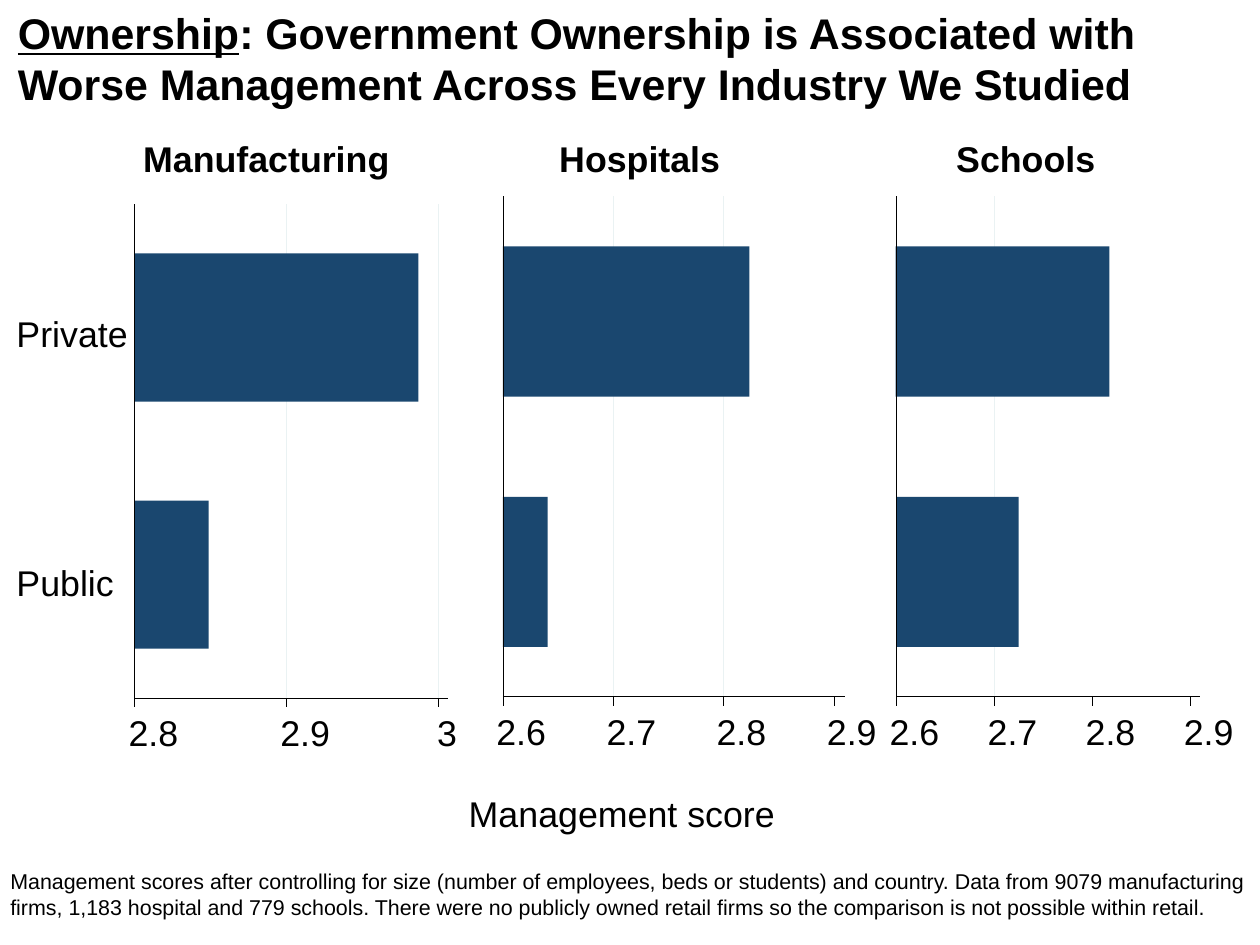
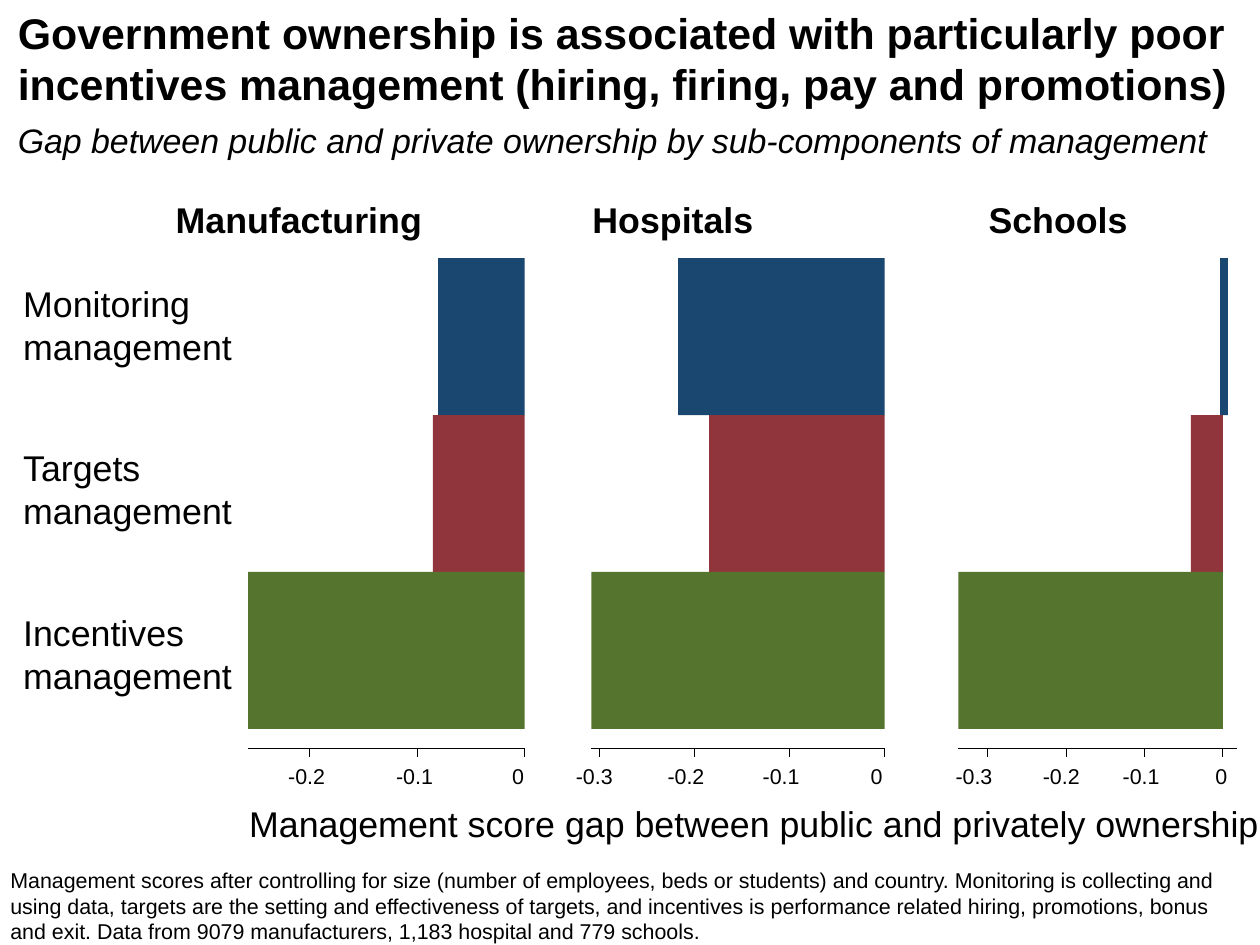
from dataclasses import dataclass

from lxml import etree
from pptx import Presentation
from pptx.dml.color import RGBColor
from pptx.enum import shapes, text as tx
from pptx.oxml import ns
from pptx.util import Pt

BLACK = RGBColor(0x00, 0x00, 0x00)
GRID = RGBColor(0xEA, 0xF2, 0xF3)
NAVY = RGBColor(0x1A, 0x47, 0x6F)
RED = RGBColor(0x90, 0x35, 0x3B)
GREEN = RGBColor(0x55, 0x75, 0x2F)
FONT = "Arial"
HAIRLINE = 0.5
TICK = 5


@dataclass
class Panel:
    name: str
    name_x: float
    base: float
    base_x: float
    unit: float
    left: float
    right: float
    top: float
    bottom: float
    axis_y: float
    bars: tuple
    ticks: tuple
    grid: tuple = ()

    def x(self, value):
        return self.base_x + (value - self.base) * 10 * self.unit


def add_text(s, x, y, w, h, value, size=20, bold=False, italic=False,
             underlined=""):
    tf = s.shapes.add_textbox(Pt(x), Pt(y), Pt(w), Pt(h)).text_frame
    tf.word_wrap = True
    tf.margin_left = tf.margin_right = tf.margin_top = tf.margin_bottom = 0
    p = tf.paragraphs[0]
    p.alignment = tx.PP_ALIGN.LEFT
    for part, underline in ((underlined, True), (value, False)):
        if part:
            r = p.add_run()
            r.text = part
            r.font.name = FONT
            r.font.size = Pt(size)
            r.font.bold = bold
            r.font.italic = italic
            r.font.underline = underline
            r.font.color.rgb = BLACK


def add_line(s, x1, y1, x2, y2, color=BLACK):
    line = s.shapes.add_connector(
        shapes.MSO_CONNECTOR.STRAIGHT, Pt(x1), Pt(y1), Pt(x2), Pt(y2))
    line.line.color.rgb = color
    line.line.width = Pt(HAIRLINE)
    etree.SubElement(line._element.spPr, ns.qn("a:effectLst"))


def add_bar(s, x, y, w, h, color):
    sp = s.shapes.add_shape(
        shapes.MSO_SHAPE.RECTANGLE, Pt(x), Pt(y), Pt(w), Pt(h))
    sp.shadow.inherit = False
    sp.fill.solid()
    sp.fill.fore_color.rgb = color
    sp.line.fill.background()


def add_bars(s, panel, colors, share):
    slot = (panel.bottom - panel.top) / len(colors)
    for i, ((start, end), color) in enumerate(zip(panel.bars, colors)):
        y = panel.top + slot * (i + (1 - share) / 2)
        add_bar(s, panel.base_x + start, y, end - start, slot * share, color)


def add_scale(s, panel, size, label_gap):
    y = panel.axis_y
    add_line(s, panel.left, y, panel.right, y)
    for value, offset in panel.ticks:
        x = panel.x(value)
        add_line(s, x, y, x, y + TICK)
        add_text(s, x + offset, y + label_gap, size * 2, size * 1.2,
                 f"{value:g}", size=size)


def add_panels(s, panels, name_y, colors, share, scale_size, label_gap):
    for panel in panels:
        add_text(s, panel.name_x, name_y, 150, 26, panel.name, bold=True)
        for value in panel.grid:
            x = panel.x(value)
            add_line(s, x, panel.bottom, x, panel.top, GRID)
        add_bars(s, panel, colors, share)
        add_scale(s, panel, scale_size, label_gap)
        if panel.grid:
            add_line(s, panel.left, panel.bottom, panel.left, panel.top)


def add_slide(prs, title, footer, footer_y, underlined=""):
    s = prs.slides.add_slide(prs.slide_layouts[6])
    add_text(s, 10, 3.6, 692, 60, title, size=24, bold=True,
             underlined=underlined)
    add_text(s, 5.8, footer_y, 693, 40, footer, size=12)
    return s


def ownership_slide(prs):
    s = add_slide(
        prs, ": Government Ownership is Associated with Worse Management "
        "Across Every Industry We Studied",
        "Management scores after controlling for size (number of employees, "
        "beds or students) and country. Data from 9079 manufacturing firms, "
        "1,183 hospital and 779 schools. There were no publicly owned retail "
        "firms so the comparison is not possible within retail.",
        486.4, underlined="Ownership")
    panels = [
        Panel("Manufacturing", 80.2, 2.8, 75.2, 85.2, 75.2, 250.8,
              114.2, 391, 391, ((0, 159.2), (0, 41.7)),
              ((2.8, -3.2), (2.9, -3.4), (3, -0.8)), (2.8, 2.9, 3)),
        Panel("Hospitals", 313.2, 2.6, 281.7, 61.8, 281.7, 473,
              110, 390.3, 390.3, ((0, 138), (0, 25)),
              ((2.6, -3.8), (2.7, -3.8), (2.8, -4), (2.9, -4)),
              (2.6, 2.7, 2.8)),
        Panel("Schools", 535.5, 2.6, 502, 54.9, 502, 672,
              110, 390.3, 390.3, ((-0.4, 119.3), (0, 68.5)),
              ((2.6, -3.8), (2.7, -3.8), (2.8, -3.8), (2.9, -3.8)), (2.7,)),
    ]
    add_panels(s, panels, 76.6, (NAVY, NAVY), share=0.6,
               scale_size=20, label_gap=7.3)
    for label, y in (("Private", 174.4), ("Public", 314)):
        add_text(s, 9.2, y, 65, 25, label)
    add_text(s, 262.5, 443.5, 190, 26, "Management score")


def incentives_slide(prs):
    s = add_slide(
        prs, "Government ownership is associated with particularly poor "
        "incentives management (hiring, firing, pay and promotions)",
        "Management scores after controlling for size (number of employees, "
        "beds or students) and country. Monitoring is collecting and using "
        "data, targets are the setting and effectiveness of targets, and "
        "incentives is performance related hiring, promotions, bonus and "
        "exit. Data from 9079 manufacturers, 1,183 hospital and 779 schools.",
        485.6)
    add_text(s, 10, 67, 692, 25, "Gap between public and private ownership "
             "by sub-components of management", size=19, italic=True)
    top, bottom, axis_y = 144.6, 408.2, 419.1
    panels = [
        Panel("Manufacturing", 98.4, 0, 293.8, 60.2, 139, 293.8,
              top, bottom, axis_y, ((-48.5, 0), (-51.3, 0), (-154.8, 0)),
              ((0, -7), (-0.1, -11.8), (-0.2, -12))),
        Panel("Hospitals", 331.8, 0, 495.4, 53.3, 331.2, 495.4,
              top, bottom, axis_y, ((-115.6, 0), (-98.2, 0), (-164.2, 0)),
              ((0, -7.8), (-0.1, -15), (-0.2, -15), (-0.3, -13))),
        Panel("Schools", 553.6, 0, 684.8, 43.9, 536.7, 692.6,
              top, bottom, axis_y, ((-1.5, 2.8), (-17.9, 0), (-148.1, 0)),
              ((0, -4.2), (-0.1, -12.2), (-0.2, -13), (-0.3, -18))),
    ]
    add_panels(s, panels, 111, (NAVY, RED, GREEN), share=1,
               scale_size=12, label_gap=8.4)
    for i, label in enumerate(("Monitoring", "Targets", "Incentives")):
        add_text(s, 13, 157.7 + i * 92.2, 125, 48, f"{label} management")
    add_text(s, 139.5, 449, 572, 26,
             "Management score gap between public and privately ownership")


def main():
    prs = Presentation()
    prs.slide_width, prs.slide_height = Pt(705.6), Pt(529.2)
    ownership_slide(prs)
    incentives_slide(prs)
    prs.save("out.pptx")


if __name__ == "__main__":
    main()
